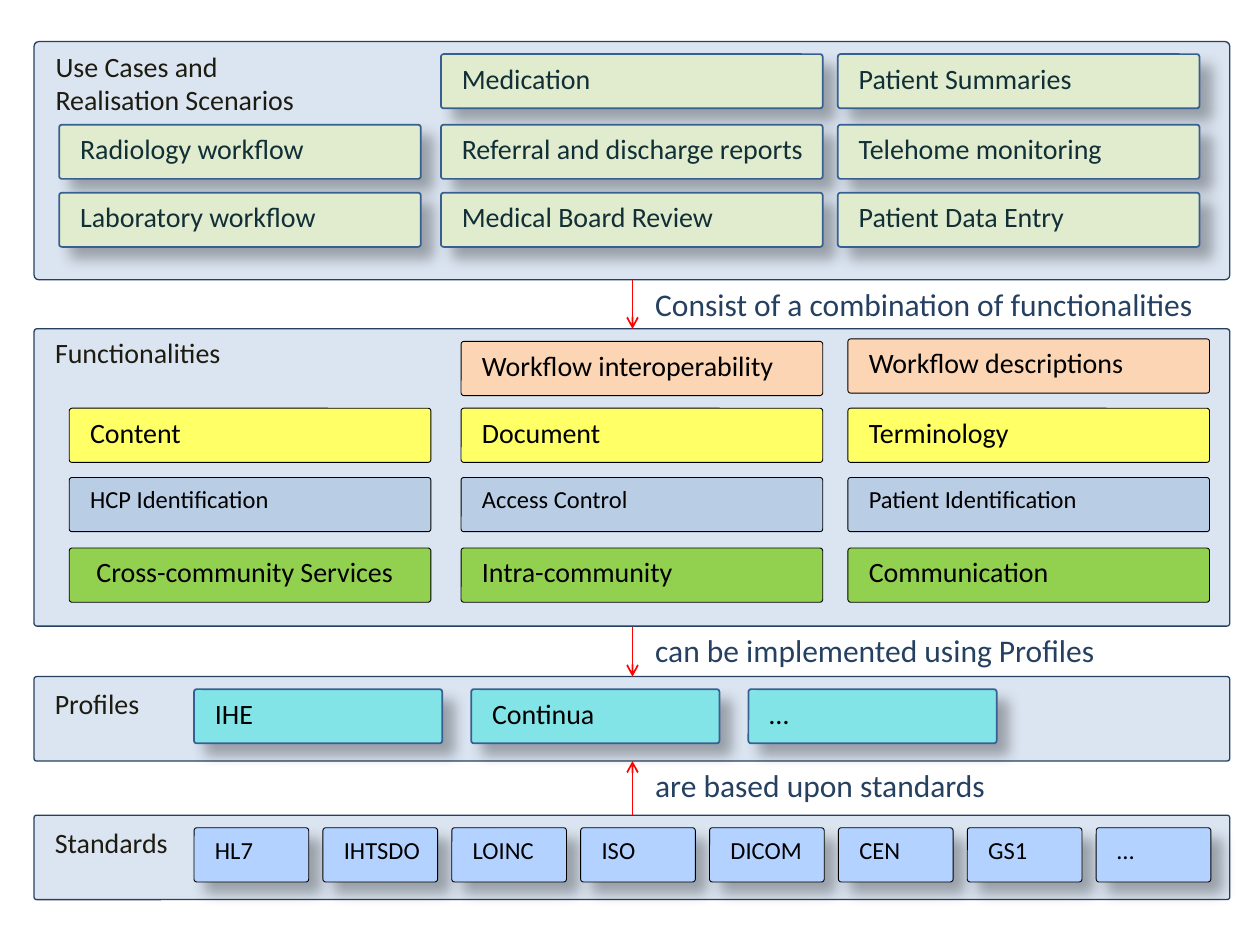
import pptx
import pptx.dml.color
import pptx.enum.shapes
import pptx.enum.text
import pptx.oxml
import pptx.oxml.ns
import pptx.util
from pptx.util import Inches

FONT = "Calibri"
NAVY, BLUE, BLACK = "254061", "376092", "000000"
CELL_HEIGHT = 0.43


def color(hex_code):
    return pptx.dml.color.RGBColor.from_string(hex_code)


class Diagram:
    def __init__(self, slide):
        self.slide = slide

    def add_text(self, frame, lines, size, text_color, margins, spacing=None):
        frame.word_wrap = True
        frame.vertical_anchor = pptx.enum.text.MSO_ANCHOR.TOP
        (frame.margin_left, frame.margin_top,
         frame.margin_right, frame.margin_bottom) = [Inches(m) for m in margins]
        for index, line in enumerate(lines):
            paragraph = frame.add_paragraph() if index else frame.paragraphs[0]
            paragraph.alignment = pptx.enum.text.PP_ALIGN.LEFT
            if spacing:
                paragraph.line_spacing = pptx.util.Pt(spacing)
            run = paragraph.add_run()
            run.text = line
            run.font.name = FONT
            run.font.size = pptx.util.Pt(size)
            run.font.color.rgb = color(text_color)

    def add_shadow(self, shape):
        effects = shape._element.spPr.find(pptx.oxml.ns.qn("a:effectLst"))
        effects.append(pptx.oxml.parse_xml(
            f'<a:outerShdw {pptx.oxml.ns.nsdecls("a")} blurRad="{pptx.util.Pt(8)}" '
            f'dist="{pptx.util.Pt(9)}" dir="2700000" algn="tl" rotWithShape="0">'
            '<a:srgbClr val="000000"><a:alpha val="30000"/></a:srgbClr>'
            '</a:outerShdw>'))

    def box(self, lines, left, top, width, height, fill, line, line_width,
            text_color, size=16, adj=0.05, shadow=False, spacing=None):
        shape = self.slide.shapes.add_shape(
            pptx.enum.shapes.MSO_SHAPE.ROUNDED_RECTANGLE,
            Inches(left), Inches(top), Inches(width), Inches(height))
        shape.adjustments[0] = adj
        shape.shadow.inherit = False
        shape.fill.solid()
        shape.fill.fore_color.rgb = color(fill)
        shape.line.color.rgb = color(line)
        shape.line.width = pptx.util.Pt(line_width)
        if shadow:
            self.add_shadow(shape)
        self.add_text(shape.text_frame, lines, size, text_color,
                      (0.16, 0.05, 0.1, 0.05), spacing)

    def panel(self, lines, top, height, adj, spacing=None):
        self.box(lines, 0.27, top, 9.49, height, "DBE5F1", NAVY, 0.75,
                 "1E1C11", adj=adj, spacing=spacing)

    def cell(self, text, left, top, width, fill, **style):
        options = dict(line=BLACK, line_width=0.5, text_color=BLACK)
        options.update(style)
        self.box([text], left, top, width, CELL_HEIGHT, fill, **options)

    def arrow(self, start, end):
        connector = self.slide.shapes.add_connector(
            pptx.enum.shapes.MSO_CONNECTOR.STRAIGHT,
            Inches(5.02), Inches(start), Inches(5.02), Inches(end))
        connector.line.color.rgb = color("FF0000")
        connector.line.width = pptx.util.Pt(1)
        namespace = pptx.oxml.ns.nsdecls("a")
        connector.line._get_or_add_ln().append(
            pptx.oxml.parse_xml(f'<a:tailEnd {namespace} type="arrow"/>'))
        connector._element.spPr.append(
            pptx.oxml.parse_xml(f'<a:effectLst {namespace}/>'))

    def caption(self, text, top):
        textbox = self.slide.shapes.add_textbox(
            Inches(5.16), Inches(top), Inches(4.84), Inches(0.38))
        self.add_text(textbox.text_frame, [text], 18, NAVY, (0.04,) * 4)


def main():
    presentation = pptx.Presentation()
    presentation.slide_width = Inches(10)
    presentation.slide_height = Inches(7.5)
    diagram = Diagram(presentation.slides.add_slide(presentation.slide_layouts[6]))
    raised = dict(line=BLUE, line_width=1, shadow=True)

    # Use cases: the first column starts one row down, below the heading
    diagram.panel(["Use Cases and", "Realisation Scenarios"], 0.33, 1.89, 0.02)
    use_cases = [
        (0.47, 2.87, [None, "Radiology workflow", "Laboratory workflow"]),
        (3.5, 3.03, ["Medication", "Referral and discharge reports",
                     "Medical Board Review"]),
        (6.65, 2.87, ["Patient Summaries", "Telehome monitoring",
                      "Patient Data Entry"]),
    ]
    for left, width, names in use_cases:
        for top, name in zip((0.43, 0.99, 1.53), names):
            if name:
                diagram.cell(name, left, top, width, "E1EBCD",
                             text_color="112F37", **raised)

    # Functionalities: one colour per row
    diagram.panel(["Functionalities"], 2.61, 2.36, 0.01)
    diagram.cell("Workflow interoperability", 3.66, 2.71, 2.87, "FCD5B5")
    diagram.cell("Workflow descriptions", 6.73, 2.69, 2.87, "FCD5B5")
    functionalities = [
        (3.24, "FFFF66", 16, ["Content", "Document", "Terminology"]),
        (3.79, "B9CDE5", 14, ["HCP Identification", "Access Control",
                              "Patient Identification"]),
        (4.35, "92D050", 16, [" Cross-community Services", "Intra-community",
                              "Communication"]),
    ]
    for top, fill, size, names in functionalities:
        for left, name in zip((0.55, 3.66, 6.73), names):
            diagram.cell(name, left, top, 2.87, fill, size=size)

    # Profiles
    diagram.panel(["Profiles"], 5.37, 0.67, 0.03, spacing=21)
    for index, name in enumerate(["IHE", "Continua", "…"]):
        diagram.cell(name, 1.54 + 2.2 * index, 5.47, 1.97, "82E4E6", **raised)

    # Standards, spread evenly from 1.54 to 8.7
    diagram.panel(["Standards"], 6.47, 0.67, 0.03, spacing=21)
    standards = ["HL7", "IHTSDO", "LOINC", "ISO", "DICOM", "CEN", "GS1", "…"]
    pitch = (8.7 - 1.54) / (len(standards) - 1)
    for index, name in enumerate(standards):
        diagram.cell(name, 1.54 + pitch * index, 6.57, 0.91, "B3D2FF",
                     size=14, shadow=True)

    # Relations between the layers
    relations = [
        (2.22, 2.61, "Consist of a combination of functionalities", 2.22),
        (4.98, 5.37, "can be implemented using Profiles", 4.97),
        (6.47, 6.04, "are based upon standards", 6.04),
    ]
    for start, end, text, top in relations:
        diagram.arrow(start, end)
        diagram.caption(text, top)

    presentation.save("out.pptx")


if __name__ == "__main__":
    main()
